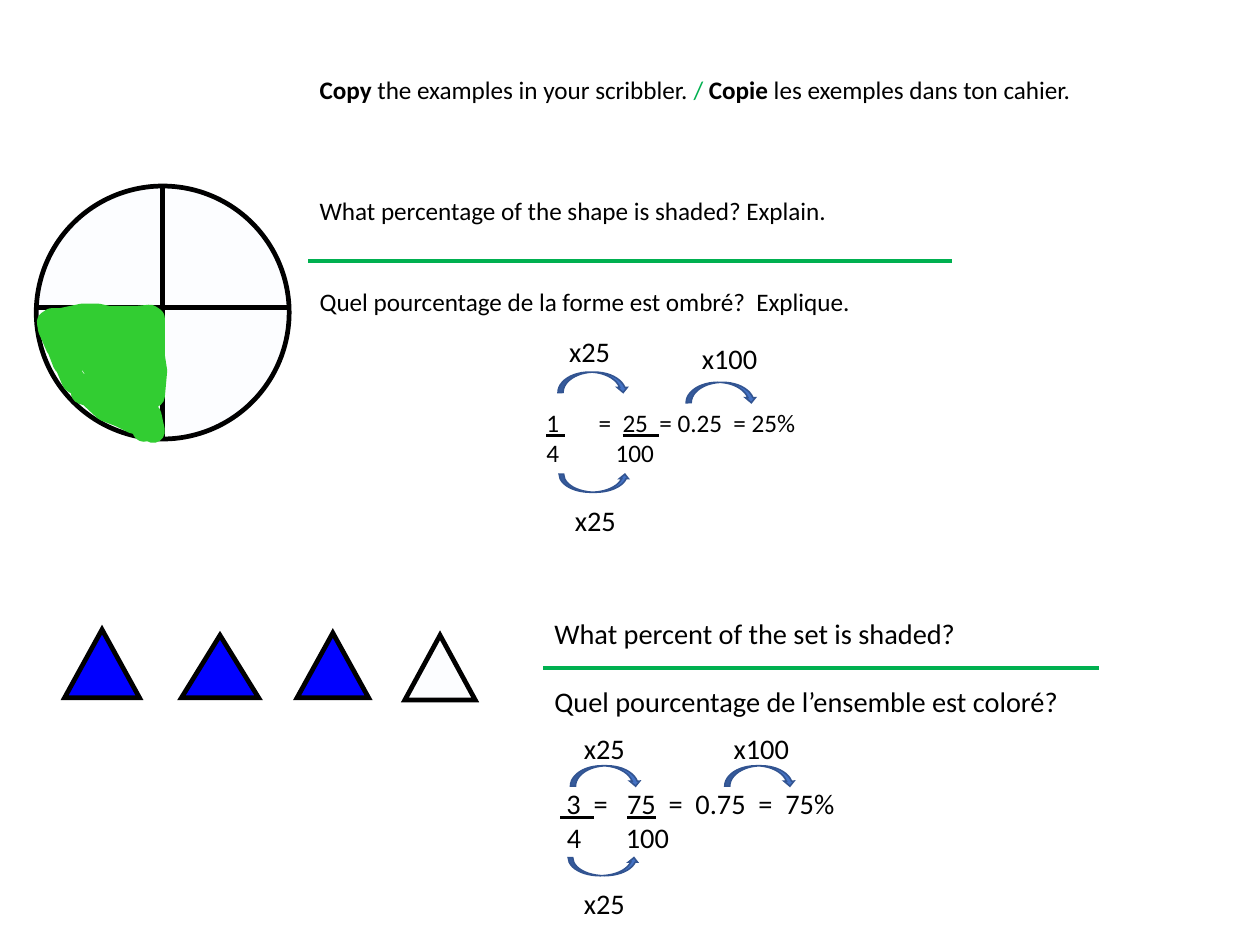
from pptx import Presentation
from pptx.dml.color import RGBColor
from pptx.enum import shapes, text
from pptx.oxml import parse_xml
from pptx.oxml.ns import nsdecls, qn
from pptx.util import Inches, Pt
from lxml import etree

THEME = {
    "font": "Calibri", "body": 16, "large": 18,
    "ink": "000000", "accent": "00B050", "paper": "FCFDFF",
    "marker": "32CD32", "triangle": "0000FF",
    "arrow": "4472C4", "arrow_edge": "325491",
    "outline": 3, "rule": 2.25, "marker_width": 15, "arrow_width": 1,
}
LINE_HEIGHT = 1.2

# Each paragraph: empty lines' worth of space before, tab stops, runs of (words, style)
SHAPE_QUESTION = [
    (0, [], [("Copy", "bold"), (" the examples in your scribbler. ", ""), ("/ ", "accent"),
             ("Copie", "bold"), (" les exemples dans ton cahier.", "")]),
    (3, [], [("What percentage of the shape is shaded? Explain.", "")]),
    (2, [], [("Quel pourcentage de la forme est ombré?  Explique.", "")]),
    (3, [2.0, 2.46], [("\t", ""), ("1 ", "underline"), ("\t=  ", ""), ("25  ", "underline"),
                      ("= 0.25  = 25%", "")]),
    (0, [2.0, 2.61], [("\t4\t100", "")]),
]
SET_QUESTION = [
    (0, [], [("What percent of the set is shaded?", "")]),
    (1, [], [("Quel pourcentage de l’ensemble est coloré?", "")]),
    (2, [0.05, 0.64], [("\t", ""), (" 3  ", "underline"), ("=\t", ""), ("75", "underline"),
                       ("  =  0.75  =  75%", "")]),
    (0, [0.11, 0.63], [("\t4\t100", "")]),
]
QUESTIONS = [
    (2.72, 0.61, 7.91, 3.6, "body", SHAPE_QUESTION),
    (4.79, 5.38, 5.79, 2.22, "large", SET_QUESTION),
]
MULTIPLIERS = [
    ("x25", 4.92, 2.9), ("x25", 4.97, 4.39), ("x100", 6.09, 2.96),
    ("x25", 5.05, 6.4), ("x25", 5.05, 7.76), ("x100", 6.37, 6.4),
]
DOWN_ARROWS = [(4.92, 3.28), (6.05, 3.37), (5.03, 6.75), (6.39, 6.75)]
UP_ARROWS = [(4.93, 4.18), (5.01, 7.56)]
RULES = [(2.72, 2.3, 8.39, 2.3), (4.79, 5.89, 9.69, 5.89)]
CIRCLE = (0.32, 1.64, 2.23, 2.23)
CIRCLE_CUTS = [(0.33, 2.71, 2.55, 2.71), (1.43, 1.64, 1.43, 3.85)]
TRIANGLES = [
    (0.57, 5.55, 0.66, 0.6, "triangle"), (1.6, 5.6, 0.68, 0.55, "triangle"),
    (2.62, 5.58, 0.63, 0.57, "triangle"), (3.57, 5.6, 0.62, 0.57, "paper"),
]
MARKER_STROKES = [
    [(1.35, 3.49), (1.37, 3.27), (1.35, 3.14), (1.35, 2.81), (1.32, 2.79), (1.22, 2.8),
     (0.95, 2.8), (0.86, 2.78), (0.73, 2.78), (0.54, 2.82), (0.46, 2.82), (0.55, 2.91),
     (0.67, 3.01), (0.79, 3.17), (0.91, 3.36), (1.04, 3.46), (1.16, 3.56), (1.13, 3.37),
     (1.1, 3.18), (1.0, 3.14), (0.86, 3.14), (1.1, 3.14), (1.2, 3.19), (1.18, 3.4),
     (1.21, 3.46), (1.22, 3.33), (1.2, 3.1), (1.12, 2.9), (1.03, 3.03), (0.93, 3.23),
     (0.99, 3.31), (1.18, 3.4), (1.25, 3.48), (1.25, 3.54), (1.22, 3.66)],
    [(1.23, 2.96), (1.05, 3.01), (0.93, 3.0), (0.84, 2.94), (0.7, 2.93), (0.53, 2.88),
     (0.43, 2.84), (0.44, 2.9), (0.51, 3.06), (0.58, 3.12), (0.63, 3.23), (0.57, 3.2),
     (0.52, 3.07), (0.59, 3.22), (0.65, 3.36), (0.78, 3.44), (0.85, 3.5), (0.73, 3.46),
     (0.77, 3.46), (0.93, 3.61), (1.06, 3.66), (1.18, 3.72)],
    [(1.3, 3.62), (1.31, 3.76), (1.27, 3.79), (1.3, 3.78), (1.32, 3.66), (1.35, 3.8)],
]


def color(name):
    return RGBColor.from_string(THEME[name])


def set_line(item, name, width, join="miter"):
    item.line.color.rgb = color(name)
    item.line.width = Pt(THEME[width])
    outline = item._element.spPr.find(qn("a:ln"))
    etree.SubElement(outline, qn(f"a:{join}"))
    if join == "round":
        outline.set("cap", "rnd")


def add_figure(page, kind, bounds, fill, line, width):
    figure = page.shapes.add_shape(kind, *map(Inches, bounds))
    figure.shadow.inherit = False
    figure.fill.solid()
    figure.fill.fore_color.rgb = color(fill)
    set_line(figure, line, width)


def add_segment(page, ends, name, width):
    segment = page.shapes.add_connector(shapes.MSO_CONNECTOR.STRAIGHT, *map(Inches, ends))
    set_line(segment, name, width)
    etree.SubElement(segment._element.spPr, qn("a:effectLst"))


def add_marker_stroke(page, points):
    start, *rest = [(Inches(across), Inches(down)) for across, down in points]
    builder = page.shapes.build_freeform(*start)
    builder.add_line_segments(rest, close=False)
    stroke = builder.convert_to_shape()
    stroke.shadow.inherit = False
    stroke.fill.background()
    set_line(stroke, "marker", "marker_width", "round")


def set_tabs(para, stops):
    tabs = "".join(f'<a:tab pos="{Inches(stop)}" algn="l"/>' for stop in stops)
    para._p.get_or_add_pPr().append(
        parse_xml(f'<a:tabLst {nsdecls("a")}>{tabs}</a:tabLst>'))


def add_text(page, bounds, size, paragraphs):
    box = page.shapes.add_textbox(*map(Inches, bounds))
    frame = box.text_frame
    frame.word_wrap = True
    frame.auto_size = text.MSO_AUTO_SIZE.NONE
    for index, (gap, stops, runs) in enumerate(paragraphs):
        para = frame.paragraphs[0] if index == 0 else frame.add_paragraph()
        para.space_before = Pt(gap * THEME[size] * LINE_HEIGHT)
        if stops:
            set_tabs(para, stops)
        for words, style in runs:
            span = para.add_run()
            span.text = words
            span.font.name = THEME["font"]
            span.font.size = Pt(THEME[size])
            span.font.bold = style == "bold"
            span.font.underline = style == "underline"
            span.font.color.rgb = color("accent" if style == "accent" else "ink")


def main():
    deck = Presentation()
    deck.slide_width, deck.slide_height = Inches(11.11), Inches(8.33)
    page = deck.slides.add_slide(deck.slide_layouts[6])
    preset = shapes.MSO_SHAPE

    add_figure(page, preset.OVAL, CIRCLE, "paper", "ink", "outline")
    for ends in CIRCLE_CUTS:
        add_segment(page, ends, "ink", "outline")
    for points in MARKER_STROKES:
        add_marker_stroke(page, points)
    for *bounds, fill in TRIANGLES:
        add_figure(page, preset.ISOSCELES_TRIANGLE, bounds, fill, "ink", "outline")

    for *bounds, size, paragraphs in QUESTIONS:
        add_text(page, bounds, size, paragraphs)
    for ends in RULES:
        add_segment(page, ends, "accent", "rule")

    for kind, height, places in ((preset.CURVED_DOWN_ARROW, 0.18, DOWN_ARROWS),
                                 (preset.CURVED_UP_ARROW, 0.16, UP_ARROWS)):
        for left, top in places:
            add_figure(page, kind, (left, top, 0.62, height),
                       "arrow", "arrow_edge", "arrow_width")
    for words, left, top in MULTIPLIERS:
        add_text(page, (left, top, 0.76, 0.4), "large", [(0, [], [(words, "")])])

    deck.save("out.pptx")


if __name__ == "__main__":
    main()
